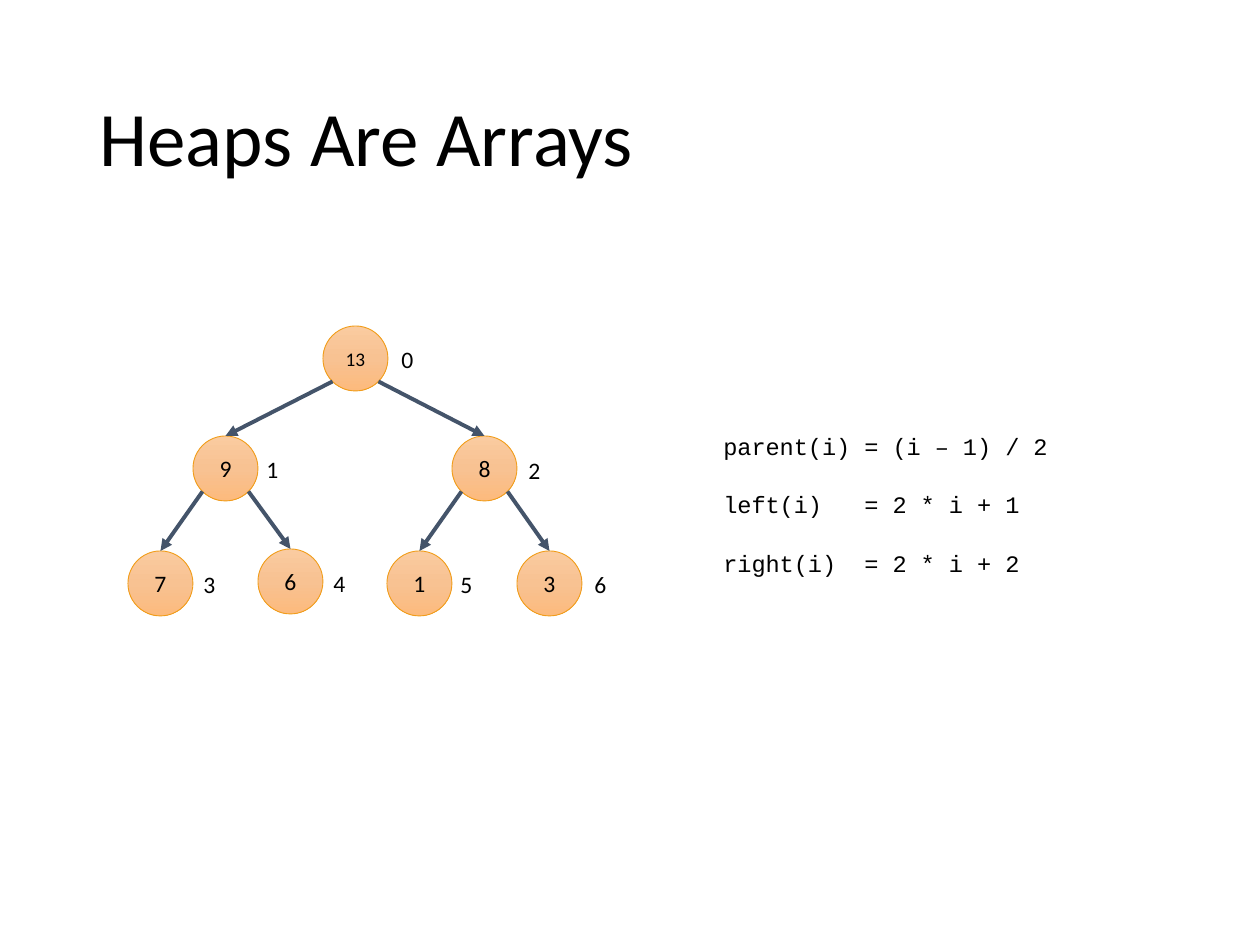
import copy
import math
from dataclasses import dataclass

from lxml import etree
from pptx import Presentation
from pptx import util as u
from pptx.dml.color import RGBColor
from pptx.enum import shapes, text
from pptx.oxml import ns


@dataclass(frozen=True)
class Theme:
    ink: str = "000000"
    edge: str = "44546A"
    node_line: str = "F19D19"
    node_fill: tuple = ("FACBA0", "F8C292", "FCBA7D")
    sans: str = "Calibri"
    mono: str = "Courier New"
    title_size: float = 44
    body_size: float = 13.5
    small_size: float = 11
    edge_width: float = 2.25
    node_line_width: float = 0.5


PX_PER_INCH = 126
DIAMETER = 65
# Heap in array order: value, node left and top, index label left and top
HEAP = [
    (13, (323, 326), (389, 339)),
    (9, (193, 436), (254, 449)),
    (8, (452, 436), (516, 450)),
    (7, (128, 551), (191, 564)),
    (6, (258, 549), (321, 563)),
    (1, (387, 551), (448, 564)),
    (3, (517, 551), (582, 564)),
]
RULES = [
    ("parent(i)", "(i – 1) / 2"),
    ("left(i)", "2 * i + 1"),
    ("right(i)", "2 * i + 2"),
]


def emu(px):
    return u.Emu(round(px * 914400 / PX_PER_INCH))


def rgb(value):
    return RGBColor.from_string(value)


class SlideBuilder:
    def __init__(self, slide, theme):
        self.s = slide
        self.theme = theme

    def style(self, p, size, font=None):
        p.font.size = u.Pt(size)
        p.font.name = font or self.theme.sans
        p.font.color.rgb = rgb(self.theme.ink)

    def title(self, words, left, top, width, height):
        sp = self.s.shapes.title
        sp.left, sp.top, sp.width, sp.height = map(emu, (left, top, width, height))
        tf = sp.text_frame
        tf.text = words
        tf.vertical_anchor = text.MSO_ANCHOR.MIDDLE
        p = tf.paragraphs[0]
        p.alignment = text.PP_ALIGN.LEFT
        p.line_spacing = 0.9
        self.style(p, self.theme.title_size)

    def node(self, value, left, top):
        t = self.theme
        sp = self.s.shapes.add_shape(
            shapes.MSO_SHAPE.OVAL, *map(emu, (left, top, DIAMETER, DIAMETER)))
        sp.shadow.inherit = False
        sp.line.color.rgb = rgb(t.node_line)
        sp.line.width = u.Pt(t.node_line_width)
        self.fill_gradient(sp)
        tf = sp.text_frame
        tf.word_wrap = False
        tf.margin_left = tf.margin_right = tf.margin_top = tf.margin_bottom = 0
        tf.vertical_anchor = text.MSO_ANCHOR.MIDDLE
        tf.text = str(value)
        p = tf.paragraphs[0]
        p.alignment = text.PP_ALIGN.CENTER
        self.style(p, t.small_size if value > 9 else t.body_size)

    def fill_gradient(self, sp):
        """Fill from top to bottom with the three node colours."""
        sp.fill.gradient()
        sp.fill.gradient_angle = 270
        first = sp.element.xpath(".//a:gs")[0]
        first.addnext(copy.deepcopy(first))
        for i, stop in enumerate(sp.fill.gradient_stops):
            stop.position = i / 2
            stop.color.rgb = rgb(self.theme.node_fill[i])

    def arrow(self, start, end):
        line = self.s.shapes.add_connector(
            shapes.MSO_CONNECTOR.STRAIGHT, *map(emu, (*start, *end)))
        line.line.color.rgb = rgb(self.theme.edge)
        line.line.width = u.Pt(self.theme.edge_width)
        etree.SubElement(line.line._get_or_add_ln(), ns.qn("a:tailEnd"), type="triangle")
        etree.SubElement(line.element.spPr, ns.qn("a:effectLst"))

    def text_box(self, lines, box, font=None, wrap=False, gap=0):
        tf = self.s.shapes.add_textbox(*map(emu, box)).text_frame
        tf.word_wrap = wrap
        tf.auto_size = text.MSO_AUTO_SIZE.SHAPE_TO_FIT_TEXT
        tf.text = "\n".join(lines)
        for p in tf.paragraphs:
            self.style(p, self.theme.body_size, font)
        for p in tf.paragraphs[:-1]:
            p.space_after = u.Pt(gap)

    def edge_to(self, child):
        """Join a node to its parent, from the lower left or lower right of the parent."""
        radius = DIAMETER / 2
        reach = radius * math.sqrt(0.5)
        left, top = HEAP[(child - 1) // 2][1]
        side = -1 if child % 2 else 1
        start = (left + radius + side * reach, top + radius + reach)
        child_left, child_top = HEAP[child][1]
        self.arrow(start, (child_left + radius, child_top))


def main():
    prs = Presentation()
    prs.slide_width, prs.slide_height = u.Inches(10), u.Inches(7.5)
    theme = Theme()
    b = SlideBuilder(prs.slides.add_slide(prs.slide_layouts[5]), theme)

    b.title("Heaps Are Arrays", 87, 50, 1086, 183)
    for value, place, _ in HEAP:
        b.node(value, *place)
    for child in range(1, len(HEAP)):
        b.edge_to(child)
    for index, (_, _, place) in enumerate(HEAP):
        b.text_box([str(index)], (*place, 38, 42))
    b.text_box([f"{call:<9} = {rule}" for call, rule in RULES],
               (711, 426, 501, 156), theme.mono, wrap=True, gap=17)

    prs.save("out.pptx")


if __name__ == "__main__":
    main()
